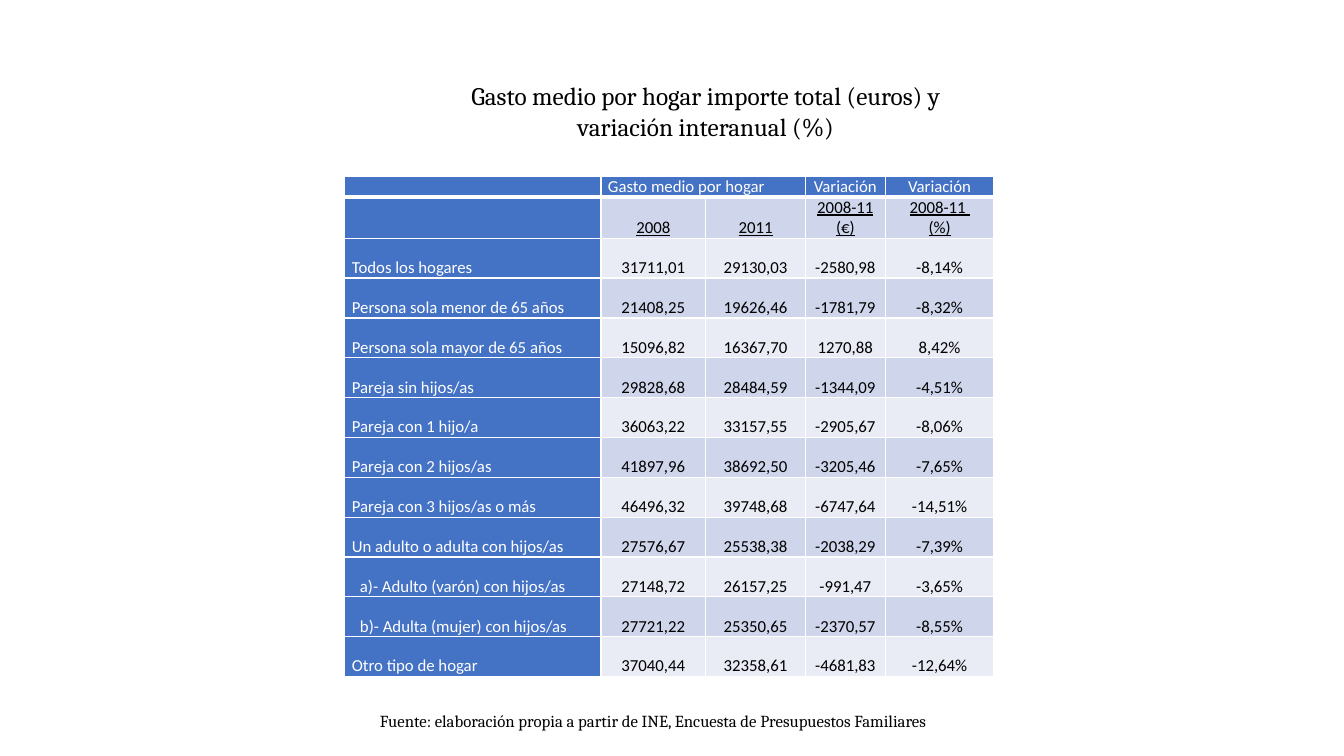
from lxml.etree import SubElement
from pptx import Presentation
from pptx.dml.color import RGBColor
from pptx.enum.text import MSO_ANCHOR as Anchor, MSO_AUTO_SIZE as AutoSize, PP_ALIGN as Align
from pptx.oxml.ns import qn
from pptx.util import Inches, Pt

# Content
YEARS = ["", "2008", "2011", "2008-11 (€)", "2008-11 \n(%)"]
HOUSEHOLDS = [
    ["Todos los hogares", "31711,01", "29130,03", "-2580,98", "-8,14%"],
    ["Persona sola menor de 65 años", "21408,25", "19626,46", "-1781,79", "-8,32%"],
    ["Persona sola mayor de 65 años", "15096,82", "16367,70", "1270,88", "8,42%"],
    ["Pareja sin hijos/as", "29828,68", "28484,59", "-1344,09", "-4,51%"],
    ["Pareja con 1 hijo/a", "36063,22", "33157,55", "-2905,67", "-8,06%"],
    ["Pareja con 2 hijos/as", "41897,96", "38692,50", "-3205,46", "-7,65%"],
    ["Pareja con 3 hijos/as o más", "46496,32", "39748,68", "-6747,64", "-14,51%"],
    ["Un adulto o adulta con hijos/as", "27576,67", "25538,38", "-2038,29", "-7,39%"],
    ["a)- Adulto (varón) con hijos/as", "27148,72", "26157,25", "-991,47", "-3,65%"],
    ["b)- Adulta (mujer) con hijos/as", "27721,22", "25350,65", "-2370,57", "-8,55%"],
    ["Otro tipo de hogar", "37040,44", "32358,61", "-4681,83", "-12,64%"],
]
HEADER = ["", "Gasto medio por hogar", "", "Variación", "Variación"]
COLUMN_WIDTHS = [2.54, 1.04, 0.99, 0.79, 1.08]
ROW_HEIGHTS = [0.2, 0.41] + [4.35 / len(HOUSEHOLDS)] * len(HOUSEHOLDS)


def color(hex_value):
    return RGBColor.from_string(hex_value)


class SlideBuilder:
    heading_font, table_font = "Cambria", "Calibri"
    black, white, blue = "000000", "FFFFFF", "4472C4"
    bands = ["E9EBF5", "CFD5EA"]
    small = 12

    def __init__(self, slide):
        self.slide = slide

    def style(self, paragraph, font, size, hex_value, align, underline=False):
        paragraph.alignment = align
        for run in paragraph.runs:
            run.font.name, run.font.size = font, Pt(size)
            run.font.bold, run.font.underline = False, underline
            run.font.color.rgb = color(hex_value)

    def text(self, words, left, top, width, height, size, align, anchor):
        box = self.slide.shapes.add_textbox(
            Inches(left), Inches(top), Inches(width), Inches(height))
        frame = box.text_frame
        frame.word_wrap = True
        frame.auto_size = AutoSize.SHAPE_TO_FIT_TEXT
        frame.vertical_anchor = anchor
        frame.text = words
        self.style(frame.paragraphs[0], self.heading_font, size, self.black, align)

    def borders(self, cell, bottom_width):
        properties = cell._tc.get_or_add_tcPr()
        for side in "LRTB":
            width = bottom_width if side == "B" else 1
            line = SubElement(properties, qn(f"a:ln{side}"), w=str(Pt(width)))
            fill = SubElement(line, qn("a:solidFill"))
            SubElement(fill, qn("a:srgbClr"), val=self.white)

    def cell(self, cell, words, row, column):
        is_blue = row == 0 or column == 0
        self.borders(cell, 3 if row == 0 else 1)
        cell.fill.solid()
        cell.fill.fore_color.rgb = color(self.blue if is_blue else self.bands[row % 2])
        cell.vertical_anchor = Anchor.BOTTOM
        is_subgroup = words.startswith(("a)", "b)"))
        cell.margin_left = Inches(0.15 if is_subgroup else 0.07)
        cell.margin_right = Inches(0.07)
        cell.margin_top = cell.margin_bottom = 0
        cell.text_frame.text = words
        is_left = column == 0 or (row == 0 and column == 1)
        for paragraph in cell.text_frame.paragraphs:
            self.style(paragraph, self.table_font, self.small,
                       self.white if is_blue else self.black,
                       Align.LEFT if is_left else Align.CENTER, underline=row == 1)
            if not words:  # keeps an empty cell from stretching its row
                SubElement(paragraph._p, qn("a:endParaRPr"), sz=str(self.small * 100))

    def table(self, rows, left, top, widths, heights):
        table = self.slide.shapes.add_table(
            len(rows), len(widths), Inches(left), Inches(top),
            Inches(sum(widths)), Inches(sum(heights))).table
        for column, width in zip(table.columns, widths):
            column.width = Inches(width)
        for table_row, height in zip(table.rows, heights):
            table_row.height = Inches(height)
        for row, values in enumerate(rows):
            for column, words in enumerate(values):
                self.cell(table.cell(row, column), words, row, column)
        table.cell(0, 1).merge(table.cell(0, 2))


def main():
    presentation = Presentation()
    presentation.slide_width, presentation.slide_height = Inches(13.33), Inches(7.5)
    builder = SlideBuilder(presentation.slides.add_slide(presentation.slide_layouts[6]))

    # Spending table
    builder.table([HEADER, YEARS] + HOUSEHOLDS, 3.42, 1.75, COLUMN_WIDTHS, ROW_HEIGHTS)

    # Source line and title
    builder.text("Fuente: elaboración propia a partir de INE, Encuesta de Presupuestos Familiares",
                 3.67, 7, 6.17, 0.3, 12, Align.LEFT, Anchor.MIDDLE)
    builder.text("Gasto medio por hogar importe total (euros) y variación interanual (%)",
                 4.5, 0.75, 5, 0.71, 18, Align.CENTER, Anchor.TOP)

    presentation.save("out.pptx")


if __name__ == "__main__":
    main()
